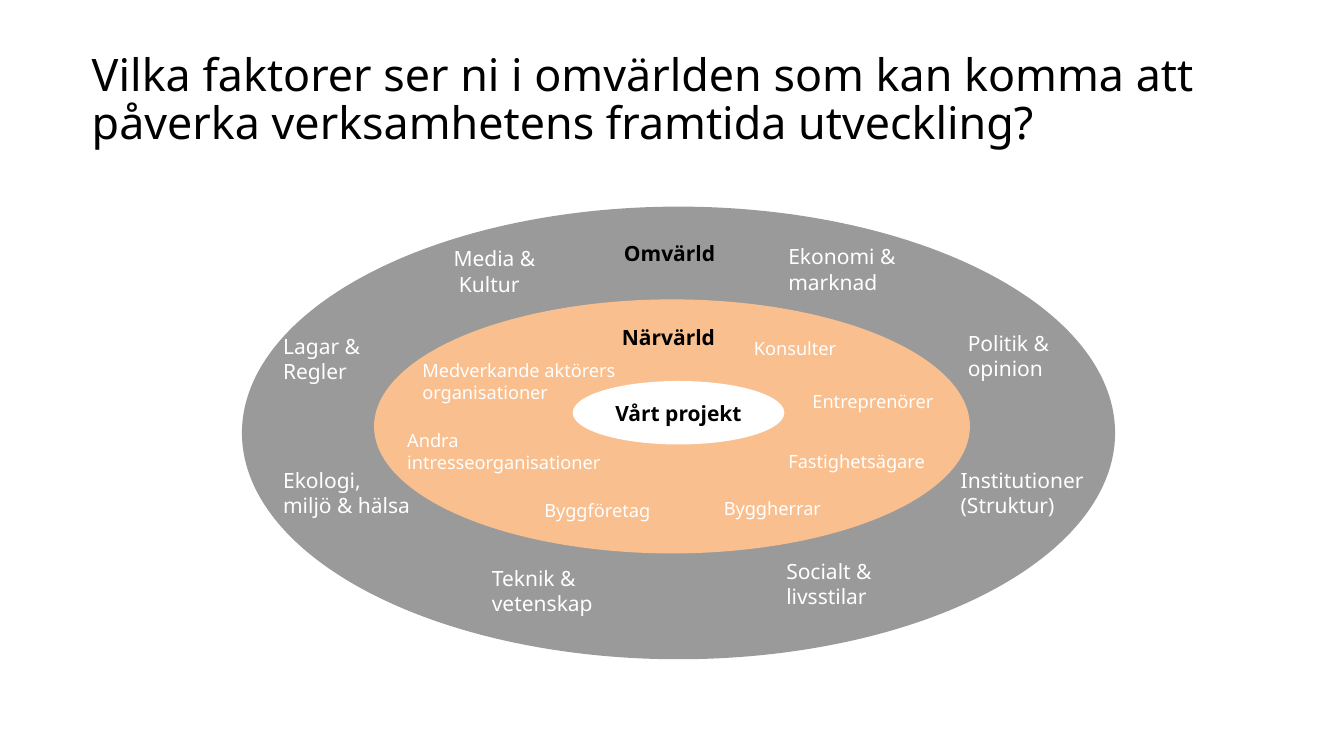
from collections import namedtuple
from dataclasses import dataclass
from pptx import Presentation
from pptx.dml.color import RGBColor as Color
from pptx.enum.shapes import MSO_SHAPE as Shape
from pptx.enum.text import MSO_ANCHOR as Anchor, MSO_AUTO_SIZE as AutoSize, PP_ALIGN as Align
from pptx.util import Inches, Pt

Box = namedtuple("Box", "left top width height")
COLUMNS, ROWS = 133.3, 75


@dataclass(frozen=True)
class Theme:
    font: str = "Noto Sans"
    dark: str = "000000"
    light: str = "FFFFFF"
    outer: str = "9A9A9A"
    inner: str = "FABF8E"
    title_size: int = 32
    label_size: int = 15
    small_size: int = 13


THEME = Theme()
TITLE = "Vilka faktorer ser ni i omvärlden som kan komma att påverka verksamhetens framtida utveckling?"
RINGS = [
    (Box(0, 0, 86.6, 44.9), THEME.outer, ""),
    (Box(13.1, 9.2, 59.1, 25.2), THEME.inner, ""),
    (Box(32.8, 17.3, 21, 6.3), THEME.light, "Vårt projekt"),
]
HEADINGS = [
    ("Närvärld", Box(36.7, 11.2, 13.4, 3.5)),
    ("Omvärld", Box(36.9, 2.9, 13.8, 3.5)),
]
OUTER_FACTORS = [
    ("Ekonomi &\nmarknad", Box(53.2, 3.2, 13.8, 6.1)),
    ("Politik &\nopinion", Box(71, 11.8, 11.2, 6.1)),
    ("Institutioner\n(Struktur)", Box(70.3, 25.4, 14.5, 6.1)),
    ("Socialt &\nlivsstilar", Box(53, 34.4, 12.2, 6.1)),
    ("Teknik &\nvetenskap", Box(23.8, 35.1, 14.5, 6.1)),
    ("Ekologi,\nmiljö & hälsa", Box(3.1, 25.4, 15.7, 6.1)),
    ("Lagar & Regler", Box(3.1, 12.1, 11.3, 6.1)),
    ("Media &\n Kultur", Box(20, 3.4, 11.3, 6.1)),
]
INNER_ACTORS = [
    ("Entreprenörer", Box(55.6, 17.7, 15.7, 3.2)),
    ("Andra intresseorganisationer", Box(15.4, 21.6, 21.8, 5.4)),
    ("Medverkande aktörers organisationer", Box(16.9, 14.7, 22.5, 5.4)),
    ("Byggföretag", Box(29, 28.5, 12.6, 3.2)),
]
CENTRED_ACTORS = [
    ("Fastighetsägare", Box(52.9, 23.7, 16.1, 3.2)),
    ("Byggherrar", Box(46.5, 28.3, 12.2, 3.2)),
    ("Konsulter", Box(48, 12.5, 13.7, 3.2)),
]


def assign(target, values):
    for name, value in values.items():
        setattr(target, name, value)


def on_grid(deck, box):
    column, row = deck.slide_width / COLUMNS, deck.slide_height / ROWS
    return Box(*(round(size * unit) for size, unit in zip(box, (column, row) * 2)))


def inside(parent, box):
    return box._replace(left=parent.left + box.left, top=parent.top + box.top)


def write(frame, text, size, color, bold=False, align=Align.LEFT, anchor=Anchor.TOP, spacing=1.0):
    assign(frame, {"word_wrap": True, "auto_size": AutoSize.NONE, "vertical_anchor": anchor})
    frame.text = text
    for para in frame.paragraphs:
        assign(para, {"alignment": align, "line_spacing": spacing})
        for span in para.runs:
            assign(span.font, {"name": THEME.font, "size": Pt(size), "bold": bold})
            span.font.color.rgb = Color.from_string(color)


def add_title(deck, page, box):
    title = page.shapes.title
    assign(title, on_grid(deck, box)._asdict())
    write(title.text_frame, TITLE, THEME.title_size, THEME.dark, spacing=0.9)


def add_ring(deck, page, box, color, text):
    ring = page.shapes.add_shape(Shape.OVAL, *on_grid(deck, box))
    ring.shadow.inherit = False
    ring.fill.solid()
    ring.fill.fore_color.rgb = Color.from_string(color)
    ring.line.fill.background()
    if text:
        write(ring.text_frame, text, THEME.label_size, THEME.dark, True, Align.CENTER, Anchor.MIDDLE)


def add_diagram(deck, page, area):
    for box, color, text in RINGS:
        add_ring(deck, page, inside(area, box), color, text)
    groups = [
        (HEADINGS, {"size": THEME.label_size, "color": THEME.dark, "bold": True}),
        (OUTER_FACTORS, {"size": THEME.label_size, "color": THEME.light}),
        (INNER_ACTORS, {"size": THEME.small_size, "color": THEME.light}),
        (CENTRED_ACTORS, {"size": THEME.small_size, "color": THEME.light, "align": Align.CENTER}),
    ]
    for labels, style in groups:
        for text, box in labels:
            label = page.shapes.add_textbox(*on_grid(deck, inside(area, box)))
            write(label.text_frame, text, **style)


def main():
    deck = Presentation()
    assign(deck, {"slide_width": Inches(13.33), "slide_height": Inches(7.5)})
    page = deck.slides.add_slide(deck.slide_layouts[5])
    add_title(deck, page, Box(8.1, 4.7, 117.2, 9.3))
    add_diagram(deck, page, Box(24, 20.5, 86.6, 44.9))
    deck.save("out.pptx")


if __name__ == "__main__":
    main()
